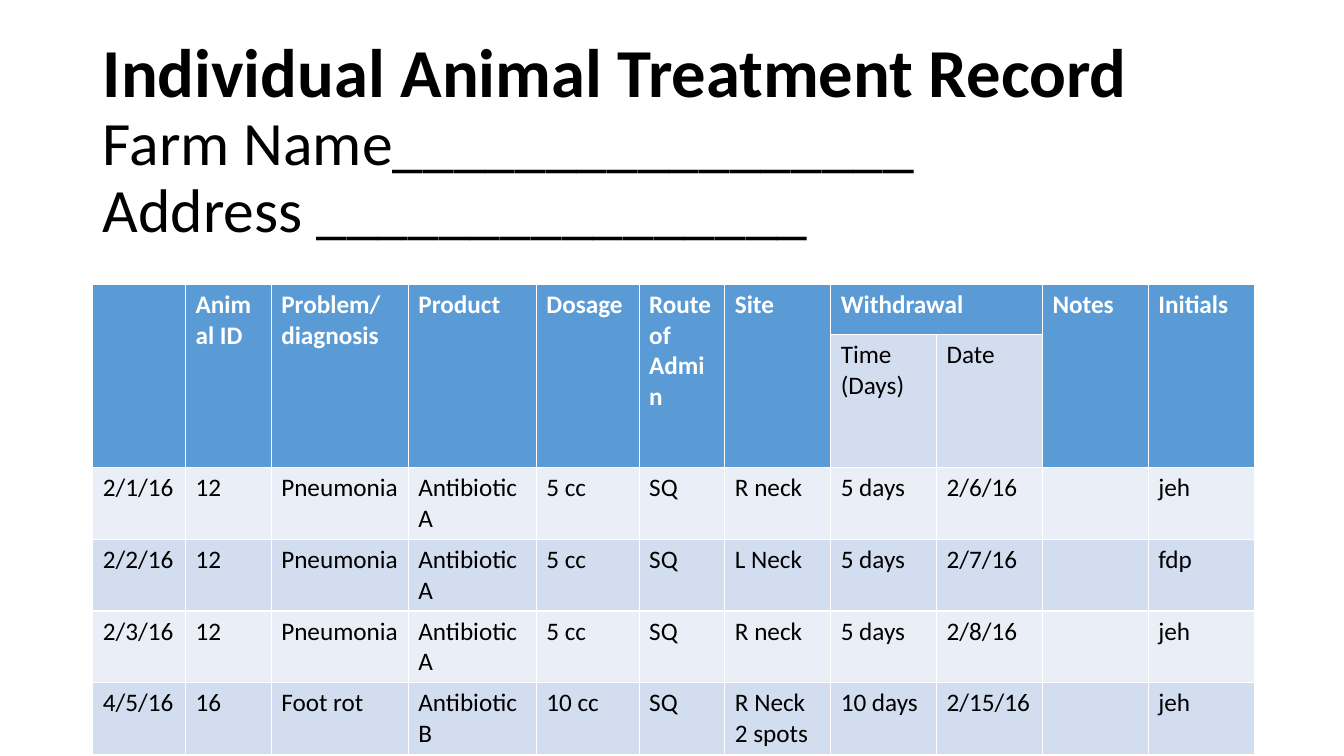
from pptx import Presentation
from pptx.dml.color import RGBColor
from pptx.enum.text import MSO_ANCHOR, MSO_AUTO_SIZE, PP_ALIGN
from pptx.util import Inches, Pt

BLACK = RGBColor(0x00, 0x00, 0x00)
WHITE = RGBColor(0xFF, 0xFF, 0xFF)
HEADER_BLUE = RGBColor(0x5B, 0x9B, 0xD5)
BAND_DARK = RGBColor(0xD2, 0xDE, 0xEF)
BAND_LIGHT = RGBColor(0xEA, 0xEF, 0xF7)


def write(paragraph, text, size=18, color=BLACK, bold=False):
    run = paragraph.add_run()
    run.text = text
    run.font.name = "Calibri"
    run.font.size = Pt(size)
    run.font.bold = bold
    run.font.color.rgb = color


prs = Presentation()
prs.slide_width, prs.slide_height = Inches(13.33), Inches(7.5)
slide = prs.slides.add_slide(prs.slide_layouts[5])

# Title with the blanks for farm name and address
title = slide.shapes.title
title.left, title.top = Inches(0.92), Inches(0)
title.width, title.height = Inches(11.5), Inches(2.82)
frame = title.text_frame
frame.auto_size = MSO_AUTO_SIZE.NONE
frame.word_wrap = True
frame.vertical_anchor = MSO_ANCHOR.MIDDLE
heading = frame.paragraphs[0]
heading.alignment = PP_ALIGN.LEFT
heading.line_spacing = 0.9
write(heading, "Individual Animal Treatment Record", size=49, bold=True)
for blank in ("Farm Name" + "_" * 17, "Address " + "_" * 16):
    heading.add_line_break()
    write(heading, blank, size=44)

# Treatment records: two header rows, then one row per treatment
headers = ["", "Animal ID", "Problem/diagnosis", "Product", "Dosage",
           "Route of Admin", "Site", "Withdrawal", "", "Notes", "Initials"]
subheaders = [""] * 7 + ["Time (Days)", "Date", "", ""]
treatments = [
    ["2/1/16", "12", "Pneumonia", "Antibiotic A", "5 cc", "SQ", "R neck",
     "5 days", "2/6/16", "", "jeh"],
    ["2/2/16", "12", "Pneumonia", "Antibiotic A", "5 cc", "SQ", "L Neck",
     "5 days", "2/7/16", "", "fdp"],
    ["2/3/16", "12", "Pneumonia", "Antibiotic A", "5 cc", "SQ", "R neck",
     "5 days", "2/8/16", "", "jeh"],
    ["4/5/16", "16", "Foot rot", "Antibiotic B", "10 cc", "SQ", "R Neck 2 spots",
     "10 days", "2/15/16", "", "jeh"],
]
records = [headers, subheaders] + treatments
column_widths = [0.92, 0.85, 1.36, 1.27, 1.02, 0.85] + [1.05] * 5
row_heights = [0.5, 0.95] + [0.41] * len(treatments)
withdrawal_columns = (7, 8)

table = slide.shapes.add_table(
    len(records), len(headers), Inches(0.92), Inches(2.82),
    Inches(11.5), Inches(4.25)).table
for column, width in zip(table.columns, column_widths):
    column.width = Inches(width)
for row, height in zip(table.rows, row_heights):
    row.height = Inches(height)

# Header cells span both header rows, except above the withdrawal details
for c in range(len(headers)):
    if c not in withdrawal_columns:
        table.cell(0, c).merge(table.cell(1, c))
table.cell(0, 7).merge(table.cell(0, 8))

# Cell fills and text
for r, record in enumerate(records):
    for c, value in enumerate(record):
        cell = table.cell(r, c)
        is_header = r == 0 or (r == 1 and c not in withdrawal_columns)
        cell.fill.solid()
        if is_header:
            cell.fill.fore_color.rgb = HEADER_BLUE
        else:
            cell.fill.fore_color.rgb = BAND_DARK if r % 2 else BAND_LIGHT
        if value:
            write(cell.text_frame.paragraphs[0], value,
                  color=WHITE if is_header else BLACK, bold=is_header)

prs.save("out.pptx")
